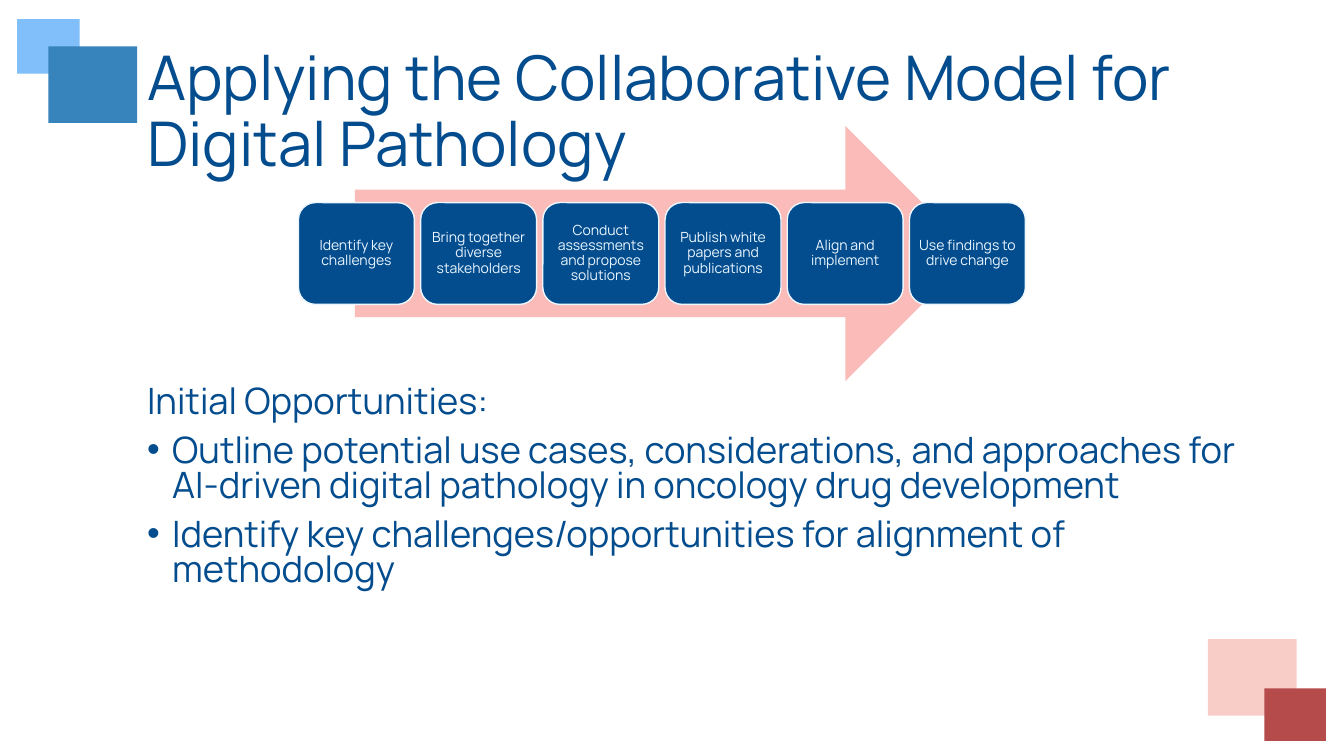
"""Build the slide on applying the collaborative model to digital pathology."""
from pptx import Presentation
from pptx import util as u
from pptx.dml.color import RGBColor
from pptx.enum import shapes, text
from pptx.oxml import parse_xml
from pptx.oxml.ns import nsdecls

COLORS = {
    "navy": "034C8E", "ice": "EBF7FF", "sky": "81BFFB", "blue": "3783BC",
    "blush": "F9CDC7", "brick": "B54B4B", "pink": "FBBBB9",
}
W, H = 13.33, 7.5
MARGIN, TEXT_W = 1.36, 11.05
STEP_LEFT, STEP_TOP, STEP_W, STEP_H, STEP_PITCH = 2.96, 2.01, 1.15, 1.01, 1.212


def add_block(kind, box, color):
    sp = s.shapes.add_shape(kind, *map(u.Inches, box))
    sp.shadow.inherit = False
    sp.fill.solid()
    sp.fill.fore_color.rgb = RGBColor.from_string(COLORS[color])
    sp.line.fill.background()
    return sp


def write(p, words, size, color="navy", align=text.PP_ALIGN.LEFT, spacing=0.9, before=0, bullet=False):
    if bullet:
        pPr = p._p.get_or_add_pPr()
        pPr.set("marL", str(u.Inches(0.25)))
        pPr.set("indent", str(-u.Inches(0.25)))
        pPr.append(parse_xml(f'<a:buFont {nsdecls("a")} typeface="Arial"/>'))
        pPr.append(parse_xml(f'<a:buChar {nsdecls("a")} char="•"/>'))
    p.alignment, p.line_spacing, p.space_before = align, spacing, u.Pt(before)
    r = p.add_run()
    r.text = words
    r.font.name, r.font.size = "Manrope", u.Pt(size)
    r.font.color.rgb = RGBColor.from_string(COLORS[color])


prs = Presentation()
prs.slide_width, prs.slide_height = u.Inches(W), u.Inches(H)
s = prs.slides.add_slide(prs.slide_layouts[5])

for box, color in [
    ((0.17, 0.19, 0.62, 0.54), "sky"),
    ((0.48, 0.46, 0.88, 0.76), "blue"),
    ((11.98, 6.34, 0.88, 0.76), "blush"),
    ((12.54, 6.83, 0.61, 0.52), "brick"),
]:
    add_block(shapes.MSO_SHAPE.RECTANGLE, box, color)

title = s.shapes.title
title.left, title.top, title.width, title.height = map(u.Inches, (MARGIN, 0.4, TEXT_W, 1.45))
tf = title.text_frame
tf.auto_size, tf.word_wrap = text.MSO_AUTO_SIZE.NONE, True
tf.vertical_anchor = text.MSO_ANCHOR.MIDDLE
write(tf.paragraphs[0], "Applying the Collaborative Model for Digital Pathology", 44)

body = s.shapes.add_textbox(*map(u.Inches, (MARGIN, 3.79, TEXT_W, 2.53)))
tf = body.text_frame
tf.word_wrap = True
write(tf.paragraphs[0], "Initial Opportunities:", 25.9, spacing=0.8)
for opportunity in [
    "Outline potential use cases, considerations, and approaches for AI-driven digital pathology in oncology drug development",
    "Identify key challenges/opportunities for alignment of methodology",
]:
    write(tf.add_paragraph(), opportunity, 25.9, spacing=0.8, before=10, bullet=True)

add_block(shapes.MSO_SHAPE.RIGHT_ARROW, (3.52, 1.25, 6.13, 2.53), "pink")
steps = [
    "Identify key challenges",
    "Bring together diverse stakeholders",
    "Conduct assessments and propose solutions",
    "Publish white papers and publications",
    "Align and implement",
    "Use findings to drive change",
]
for i, step in enumerate(steps):
    box = (STEP_LEFT + i * STEP_PITCH, STEP_TOP, STEP_W, STEP_H)
    sp = add_block(shapes.MSO_SHAPE.ROUNDED_RECTANGLE, box, "navy")
    sp.line.color.rgb = RGBColor.from_string(COLORS["ice"])
    sp.line.width = u.Pt(1)
    tf = sp.text_frame
    tf.word_wrap, tf.vertical_anchor = True, text.MSO_ANCHOR.MIDDLE
    tf.margin_left = tf.margin_right = tf.margin_top = tf.margin_bottom = u.Inches(0.04)
    write(tf.paragraphs[0], step, 10, color="ice", align=text.PP_ALIGN.CENTER)

prs.save("out.pptx")
